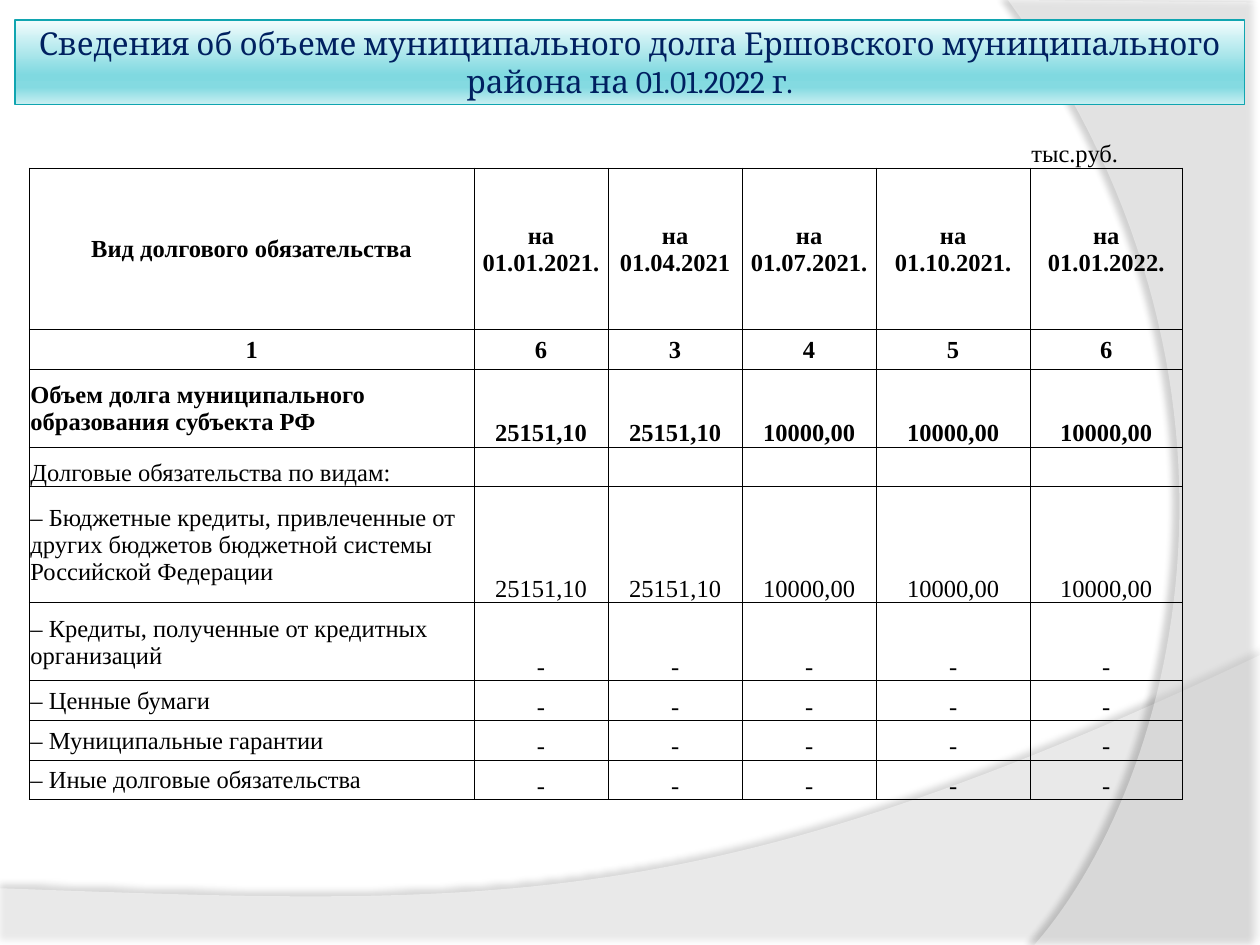
from copy import deepcopy
from dataclasses import dataclass

from lxml.etree import SubElement
from pptx import Presentation
from pptx.dml.color import RGBColor
from pptx.enum.shapes import MSO_SHAPE
from pptx.enum.text import MSO_ANCHOR, PP_ALIGN
from pptx.oxml.ns import qn
from pptx.util import Pt


@dataclass(frozen=True)
class Theme:
    white: str = "FFFFFF"
    black: str = "000000"
    navy: str = "002060"
    teal: str = "10A5B0"
    grad: tuple = ((0, "F2FCFD"), (0.65, "80D9E0"), (0.8, "84DAE1"), (1, "C8EFF2"))
    head: str = "Cambria"
    body: str = "Times New Roman"
    big: int = 18
    small: int = 14
    rule: float = 0.5
    plain: str = "{2D5ABB26-0587-4C30-8999-92F81FD0307C}"


THEME = Theme()
MID, LOW = MSO_ANCHOR.MIDDLE, MSO_ANCHOR.BOTTOM
DASHES = ["-"] * 5
DEBT = ["25151,10"] * 2 + ["10000,00"] * 3
DATES = ["01.01.2021.", "01.04.2021", "01.07.2021.", "01.10.2021.", "01.01.2022."]
ROWS = [
    (92.2, MID, MID, True, ["Вид долгового обязательства"] + [f"на {day}" for day in DATES]),
    (22.3, MID, MID, True, ["1", "6", "3", "4", "5", "6"]),
    (44.6, MID, LOW, True, ["Объем долга муниципального образования субъекта РФ"] + DEBT),
    (22.3, LOW, LOW, False, ["Долговые обязательства по видам:"] + [""] * 5),
    (66.2, MID, LOW, False, ["– Бюджетные кредиты, привлеченные от других бюджетов "
                             "бюджетной системы Российской Федерации"] + DEBT),
    (44.6, MID, LOW, False, ["– Кредиты, полученные от кредитных организаций"] + DASHES),
    (22.3, MID, LOW, False, ["– Ценные бумаги"] + DASHES),
    (22.3, MID, LOW, False, ["– Муниципальные гарантии"] + DASHES),
    (22.3, MID, LOW, False, ["– Иные долговые обязательства"] + DASHES),
]
COLS = [254.2, 76.6, 76.6, 76.6, 88, 87, 44.4]
EDGE = 22.3


def write(frame, text, font=THEME.body, size=THEME.small, color=THEME.black,
          bold=False, align=PP_ALIGN.CENTER):
    para = frame.paragraphs[0]
    para.alignment = align
    run = para.add_run()
    run.text = text
    run.font.name = font
    run.font.size = Pt(size)
    run.font.bold = bold
    run.font.color.rgb = RGBColor.from_string(color)


def curve(a, b, c, d, steps=60):
    for i in range(steps + 1):
        t = i / steps
        u = 1 - t
        yield tuple(u**3 * p + 3 * u * u * t * q + 3 * u * t * t * r + t**3 * s
                    for p, q, r, s in zip(a, b, c, d))


def add_wave(slide, points, alpha, shade, blur, dist, angle):
    points = [(Pt(x), Pt(y)) for x, y in points]
    pen = slide.shapes.build_freeform(*points[0], scale=1)
    pen.add_line_segments(points[1:], close=True)
    wave = pen.convert_to_shape()
    wave.shadow.inherit = False
    wave.line.fill.background()
    wave.fill.solid()
    wave.fill.fore_color.rgb = RGBColor.from_string(THEME.white)
    props = wave._element.spPr
    tint = props.find(qn("a:solidFill")).find(qn("a:srgbClr"))
    SubElement(tint, qn("a:alpha"), val=str(alpha * 1000))
    shadow = SubElement(props.find(qn("a:effectLst")), qn("a:outerShdw"),
                        blurRad=str(Pt(blur)), dist=str(Pt(dist)),
                        dir=str(angle * 60000), algn="ctr", rotWithShape="0")
    dark = SubElement(shadow, qn("a:srgbClr"), val=THEME.black)
    SubElement(dark, qn("a:alpha"), val=str(shade * 1000))


def add_title(slide, text):
    box = slide.shapes.add_shape(MSO_SHAPE.RECTANGLE, Pt(8.6), Pt(11.5), Pt(702.7), Pt(48.2))
    box.shadow.inherit = False
    box.line.color.rgb = RGBColor.from_string(THEME.teal)
    box.line.width = Pt(0.75)
    box.fill.gradient()
    box.fill.gradient_angle = 270
    stops = box._element.spPr.find(qn("a:gradFill")).find(qn("a:gsLst"))
    while len(stops) < len(THEME.grad):
        stops.append(deepcopy(stops[0]))
    for stop, (place, color) in zip(box.fill.gradient_stops, THEME.grad):
        stop.position = place
        stop.color.rgb = RGBColor.from_string(color)
    frame = box.text_frame
    frame.word_wrap = True
    frame.vertical_anchor = MID
    frame.margin_left = frame.margin_right = Pt(3.6)
    frame.margin_top = frame.margin_bottom = Pt(3.6)
    write(frame, text, font=THEME.head, size=THEME.big, color=THEME.navy)


def rule_cell(cell):
    props = cell._tc.get_or_add_tcPr()
    for side in ("lnL", "lnR", "lnT", "lnB"):
        line = SubElement(props, qn(f"a:{side}"), w=str(Pt(THEME.rule)))
        fill = SubElement(line, qn("a:solidFill"))
        SubElement(fill, qn("a:srgbClr"), val=THEME.black)


def fill_row(table, index, row):
    height, first, rest, bold, texts = row
    table.rows[index].height = Pt(height)
    for col, text in enumerate(texts):
        cell = table.cell(index, col)
        rule_cell(cell)
        cell.vertical_anchor = rest if col else first
        if index == 1:
            cell.margin_left = cell.margin_right = Pt(3)
        left = col == 0 and index > 2
        if text:
            write(cell.text_frame, text, bold=bold,
                  align=PP_ALIGN.LEFT if left else PP_ALIGN.CENTER)


def add_debts(slide):
    count = len(ROWS) + 3
    tall = 3 * EDGE + sum(row[0] for row in ROWS)
    shape = slide.shapes.add_table(count, len(COLS), Pt(16.7), Pt(73.4),
                                   Pt(sum(COLS)), Pt(tall))
    table = shape.table
    table.first_row = table.horz_banding = False
    for style in table._tbl.iter(qn("a:tableStyleId")):
        style.text = THEME.plain
    for col, width in zip(table.columns, COLS):
        col.width = Pt(width)
    for index in (0, count - 2, count - 1):
        table.rows[index].height = Pt(EDGE)
    for cell in table.iter_cells():
        cell.margin_left = cell.margin_right = cell.margin_top = Pt(0.7)
        cell.margin_bottom = 0
    for index, row in enumerate(ROWS, 1):
        fill_row(table, index, row)
    unit = table.cell(0, 5)
    unit.vertical_anchor = LOW
    write(unit.text_frame, "тыс.руб.", align=PP_ALIGN.LEFT)
    table.cell(count - 1, 0).merge(table.cell(count - 1, 5))
    for cell in table.iter_cells():
        cell.fill.background()


def main():
    deck = Presentation()
    deck.slide_width, deck.slide_height = Pt(720), Pt(540)
    slide = deck.slides.add_slide(deck.slide_layouts[6])
    floor = curve((720, 374.4), (402.5, 524.9), (281.5, 517.7), (0, 507.6))
    add_wave(slide, [(0, 540), (720, 540), *floor], 45, 35, 4, 3.5, 270)
    side = curve((591.1, 540), (673.2, 445.7), (733, 216), (576, 0))
    add_wave(slide, [(720, 1.4), (720, 540), *side], 40, 45, 4, 4, 180)
    add_title(slide, "Сведения об объеме муниципального долга Ершовского "
                     "муниципального района на 01.01.2022 г.")
    add_debts(slide)
    deck.save("out.pptx")


if __name__ == "__main__":
    main()
